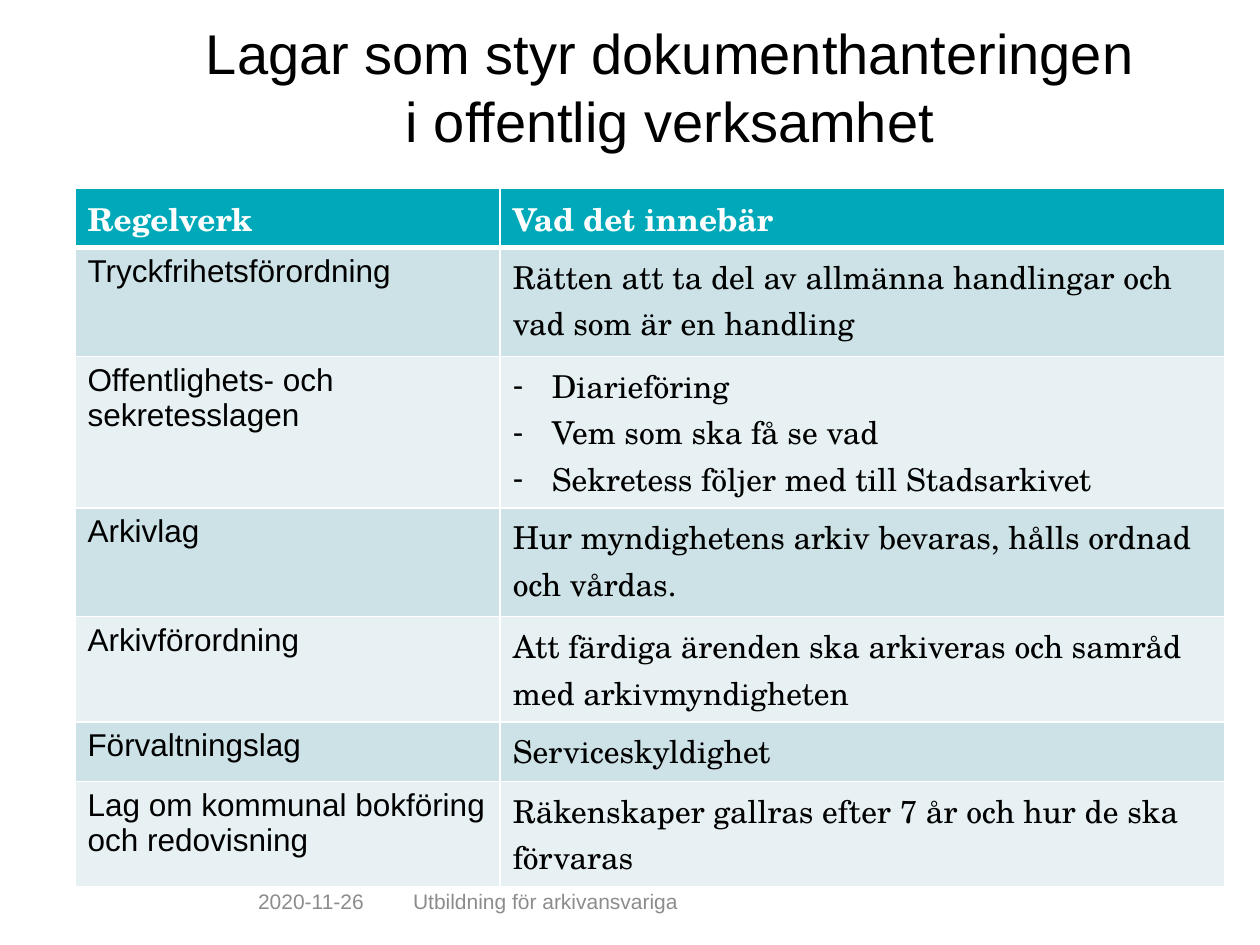
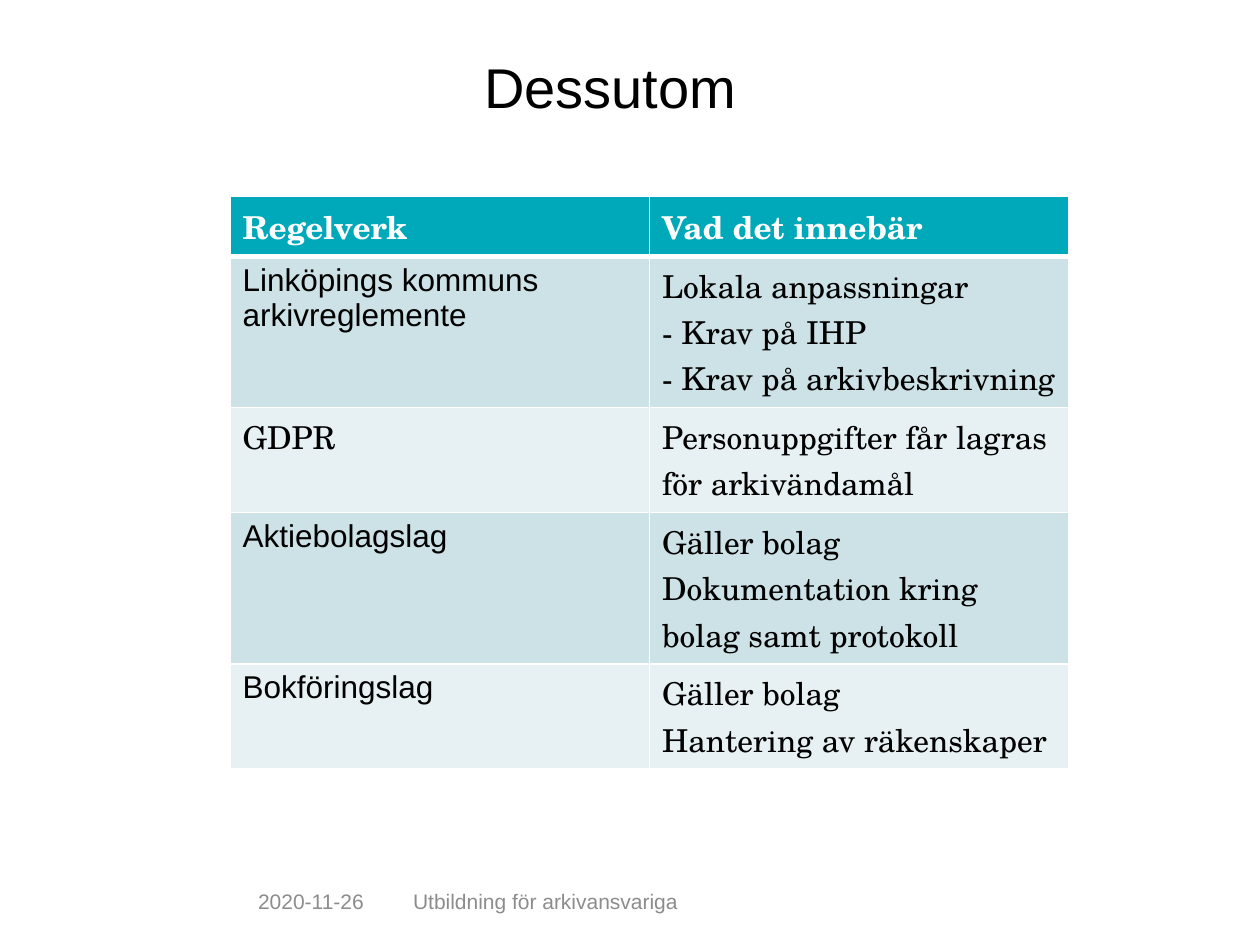
from pptx import Presentation
from pptx.dml.color import RGBColor
from pptx.enum.text import MSO_ANCHOR as Anchor, PP_ALIGN as Align
from pptx.oxml.ns import qn
from pptx.util import Inches, Pt
from lxml.etree import SubElement

BLACK = RGBColor(0x00, 0x00, 0x00)
WHITE = RGBColor(0xFF, 0xFF, 0xFF)
GREY = RGBColor(0x8C, 0x8C, 0x8C)
TEAL = RGBColor(0x00, 0xA9, 0xB9)
BAND_DARK = RGBColor(0xCC, 0xE2, 0xE6)
BAND_LIGHT = RGBColor(0xE7, 0xF1, 0xF3)

SANS = "Arial"
SERIF = "TeX Gyre Schola"
SERIF_RULES = {"GDPR"}

# The slide is a grid of 100 columns and 75 rows
COLUMNS, ROWS = 100, 75
BLANK_LAYOUT = 6

# Table row heights for one, two and three lines of text
ONE_LINE, TWO_LINES, THREE_LINES = 4.75, 8.35, 12
TWO_LINES_LOOSE = 8.65

HEADINGS = ("Regelverk", "Vad det innebär")
DATE = "2020-11-26"
FOOTER = "Utbildning för arkivansvariga"

# Each rule is followed by its meaning; a list becomes dashed paragraphs
LAWS = [
    ("Tryckfrihetsförordning",
     "Rätten att ta del av allmänna handlingar och vad som är en handling"),
    ("Offentlighets- och sekretesslagen",
     ["Diarieföring", "Vem som ska få se vad",
      "Sekretess följer med till Stadsarkivet"]),
    ("Arkivlag", "Hur myndighetens arkiv bevaras, hålls ordnad och vårdas."),
    ("Arkivförordning",
     "Att färdiga ärenden ska arkiveras och samråd med arkivmyndigheten"),
    ("Förvaltningslag", "Serviceskyldighet"),
    ("Lag om kommunal bokföring och redovisning",
     "Räkenskaper gallras efter 7 år och hur de ska förvaras"),
]
MORE_RULES = [
    ("Linköpings kommuns arkivreglemente",
     "Lokala anpassningar\v- Krav på IHP\v- Krav på arkivbeskrivning"),
    ("GDPR", "Personuppgifter får lagras för arkivändamål"),
    ("Aktiebolagslag",
     "Gäller bolag\nDokumentation kring bolag samt protokoll"),
    ("Bokföringslag", "Gäller bolag\nHantering av räkenskaper"),
]


def add_dash(para):
    """Give a paragraph a hanging dash."""
    props = para._p.get_or_add_pPr()
    props.set("marL", str(Inches(0.31)))
    props.set("indent", str(-Inches(0.31)))
    SubElement(props, qn("a:buFont"), typeface=SANS)
    SubElement(props, qn("a:buChar"), char="-")


def write(frame, text, *, font=SANS, size=18, color=BLACK, bold=False,
          align=Align.LEFT, dashed=False):
    """Fill a text frame; a newline starts a paragraph, \\v breaks a line."""
    frame.word_wrap = True
    for index, line in enumerate(text.split("\n")):
        para = frame.add_paragraph() if index else frame.paragraphs[0]
        para.text = line
        para.alignment = align
        if dashed:
            add_dash(para)
        for span in para.runs:
            span.font.name = font
            span.font.size = Pt(size)
            span.font.bold = bold
            span.font.color.rgb = color


def add_borders(cell, bottom):
    """Draw white cell borders; the bottom one has its own width in points."""
    props = cell._tc.get_or_add_tcPr()
    widths = {"a:lnL": 1, "a:lnR": 1, "a:lnT": 1, "a:lnB": bottom}
    for index, (tag, width) in enumerate(widths.items()):
        line = SubElement(props, qn(tag), w=str(Pt(width)))
        props.insert(index, line)
        fill = SubElement(line, qn("a:solidFill"))
        SubElement(fill, qn("a:srgbClr"), val=str(WHITE))


class RulesDeck:
    def __init__(self):
        self.deck = Presentation()
        self.deck.slide_width = Inches(10)
        self.deck.slide_height = Inches(7.5)
        self.page = None

    def across(self, columns):
        return int(self.deck.slide_width * columns / COLUMNS)

    def down(self, rows):
        return int(self.deck.slide_height * rows / ROWS)

    def text(self, left, top, width, height, text, anchor=Anchor.TOP, **style):
        box = self.page.shapes.add_textbox(
            self.across(left), self.down(top),
            self.across(width), self.down(height))
        box.text_frame.vertical_anchor = anchor
        write(box.text_frame, text, **style)

    def start_page(self, title, left, top):
        """Add a slide with its title and the shared footer."""
        layout = self.deck.slide_layouts[BLANK_LAYOUT]
        self.page = self.deck.slides.add_slide(layout)
        self.text(left, top, 85, 12.5, title, size=32, align=Align.CENTER)
        for start, width, label in ((19.5, 12.3, DATE), (31.8, 39.5, FOOTER)):
            self.text(start, 69.5, width, 4, label, anchor=Anchor.MIDDLE,
                      size=12, color=GREY)

    def cell(self, cell, text, fill, bottom=1, **style):
        cell.fill.solid()
        cell.fill.fore_color.rgb = fill
        add_borders(cell, bottom)
        write(cell.text_frame, text, **style)

    def table(self, left, top, widths, heights, rules):
        grid = self.page.shapes.add_table(
            len(heights), len(widths), self.across(left), self.down(top),
            self.across(sum(widths)), self.down(sum(heights))).table
        for column, width in zip(grid.columns, widths):
            column.width = self.across(width)
        for row, height in zip(grid.rows, heights):
            row.height = self.down(height)

        for column, heading in enumerate(HEADINGS):
            self.cell(grid.cell(0, column), heading, TEAL, bottom=3,
                      font=SERIF, color=WHITE, bold=True)
        for row, (rule, meaning) in enumerate(rules, start=1):
            band = BAND_DARK if row % 2 else BAND_LIGHT
            dashed = isinstance(meaning, list)
            self.cell(grid.cell(row, 0), rule, band,
                      font=SERIF if rule in SERIF_RULES else SANS)
            self.cell(grid.cell(row, 1),
                      "\n".join(meaning) if dashed else meaning, band,
                      font=SERIF, dashed=dashed)


def main():
    rules_deck = RulesDeck()

    # Laws for public bodies
    rules_deck.start_page(
        "Lagar som styr dokumenthanteringen\vi offentlig verksamhet", 10.7, 1)
    rules_deck.table(5.95, 14.9, (33.75, 57.5),
                     (ONE_LINE, TWO_LINES_LOOSE, THREE_LINES, TWO_LINES_LOOSE,
                      TWO_LINES, ONE_LINE, TWO_LINES), LAWS)

    # Further rules
    rules_deck.start_page("Dessutom", 5.95, 3.7)
    rules_deck.table(18.25, 15.6, (33.3, 33.3),
                     (ONE_LINE, THREE_LINES, TWO_LINES, THREE_LINES,
                      TWO_LINES), MORE_RULES)

    rules_deck.deck.save("out.pptx")


if __name__ == "__main__":
    main()
